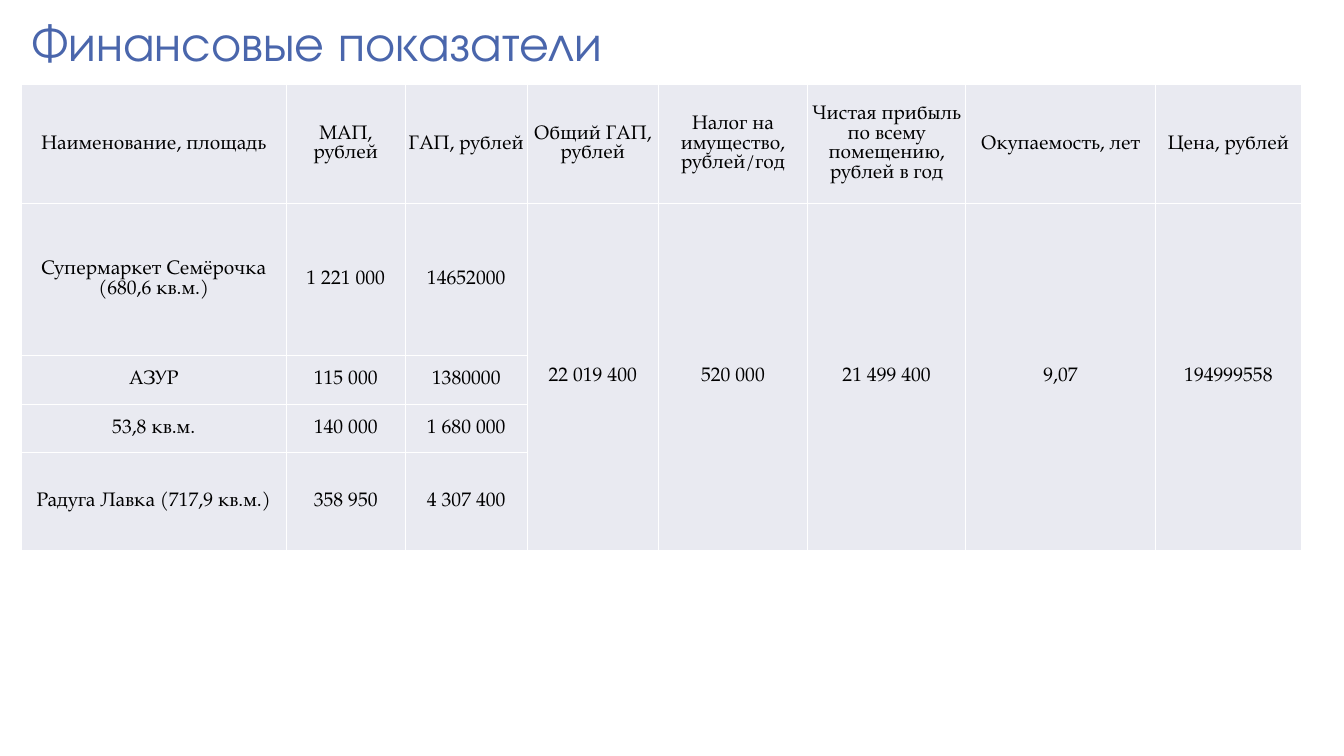
from lxml import etree
from pptx import Presentation
from pptx import util as u
from pptx.dml import color
from pptx.enum import text
from pptx.oxml import ns

PX = 9144
TITLE_FONT = "TeX Gyre Adventor"
TABLE_FONT = "TeX Gyre Pagella"
COLUMN_WIDTHS = [263, 118, 121, 130, 148, 157, 188, 145]
ROW_HEIGHTS = [118, 151, 48, 48, 97]
FIRST_TOTAL_COLUMN = 3
ROWS = [
    ["Наименование, площадь", "МАП, рублей", "ГАП, рублей", "Общий ГАП, рублей",
     "Налог на имущество, рублей/год", "Чистая прибыль по всему помещению, рублей в год",
     "Окупаемость, лет", "Цена, рублей"],
    ["Супермаркет Семёрочка (680,6 кв.м.)", "1 221 000", "14652000", "22 019 400",
     "520 000", "21 499 400", "9,07", "194999558"],
    ["АЗУР", "115 000", "1380000"],
    ["53,8 кв.м.", "140 000", "1 680 000"],
    ["Радуга Лавка (717,9 кв.м.)", "358 950", "4 307 400"],
]


def px(length):
    return u.Emu(length * PX)


def rgb(value):
    return color.RGBColor.from_string(value)


def add_span(para, words, font, size, ink):
    span = para.add_run()
    span.text = words
    span.font.name = font
    span.font.size = u.Pt(size)
    span.font.color.rgb = rgb(ink)


def add_borders(cell, ink):
    properties = cell._tc.get_or_add_tcPr()
    for side in ("a:lnL", "a:lnR", "a:lnT", "a:lnB"):
        line = etree.SubElement(properties, ns.qn(side), w=str(u.Pt(1)))
        fill = etree.SubElement(line, ns.qn("a:solidFill"))
        etree.SubElement(fill, ns.qn("a:srgbClr"), val=ink)


def style_cell(cell):
    add_borders(cell, "FFFFFF")
    cell.fill.solid()
    cell.fill.fore_color.rgb = rgb("E9EAF1")
    cell.vertical_anchor = text.MSO_ANCHOR.MIDDLE
    cell.margin_left = cell.margin_right = cell.margin_top = px(1)
    cell.margin_bottom = 0


def add_title(page, left, top, width, height):
    box = page.shapes.add_textbox(px(left), px(top), px(width), px(height))
    frame = box.text_frame
    frame.word_wrap = True
    frame.vertical_anchor = text.MSO_ANCHOR.BOTTOM
    para = frame.paragraphs[0]
    para.line_spacing = 0.8
    add_span(para, "Финансовые показатели", TITLE_FONT, 36, "4A66AC")


def add_finance_table(page, left, top):
    table = page.shapes.add_table(
        len(ROW_HEIGHTS), len(COLUMN_WIDTHS), px(left), px(top),
        px(sum(COLUMN_WIDTHS)), px(sum(ROW_HEIGHTS))).table
    for column, width in zip(table.columns, COLUMN_WIDTHS):
        column.width = px(width)
    for row, height in zip(table.rows, ROW_HEIGHTS):
        row.height = px(height)
    for cell in table.iter_cells():
        style_cell(cell)
    for index in range(FIRST_TOTAL_COLUMN, len(COLUMN_WIDTHS)):
        table.cell(1, index).merge(table.cell(len(ROWS) - 1, index))
    for row_index, row in enumerate(ROWS):
        for column_index, words in enumerate(row):
            para = table.cell(row_index, column_index).text_frame.paragraphs[0]
            para.alignment = text.PP_ALIGN.CENTER
            add_span(para, words, TABLE_FONT, 14, "000000")


def main():
    deck = Presentation()
    deck.slide_width, deck.slide_height = px(1333), px(750)
    page = deck.slides.add_slide(deck.slide_layouts[6])
    add_title(page, 21, 0, 930, 76)
    add_finance_table(page, 21, 84)
    deck.save("out.pptx")


if __name__ == "__main__":
    main()
